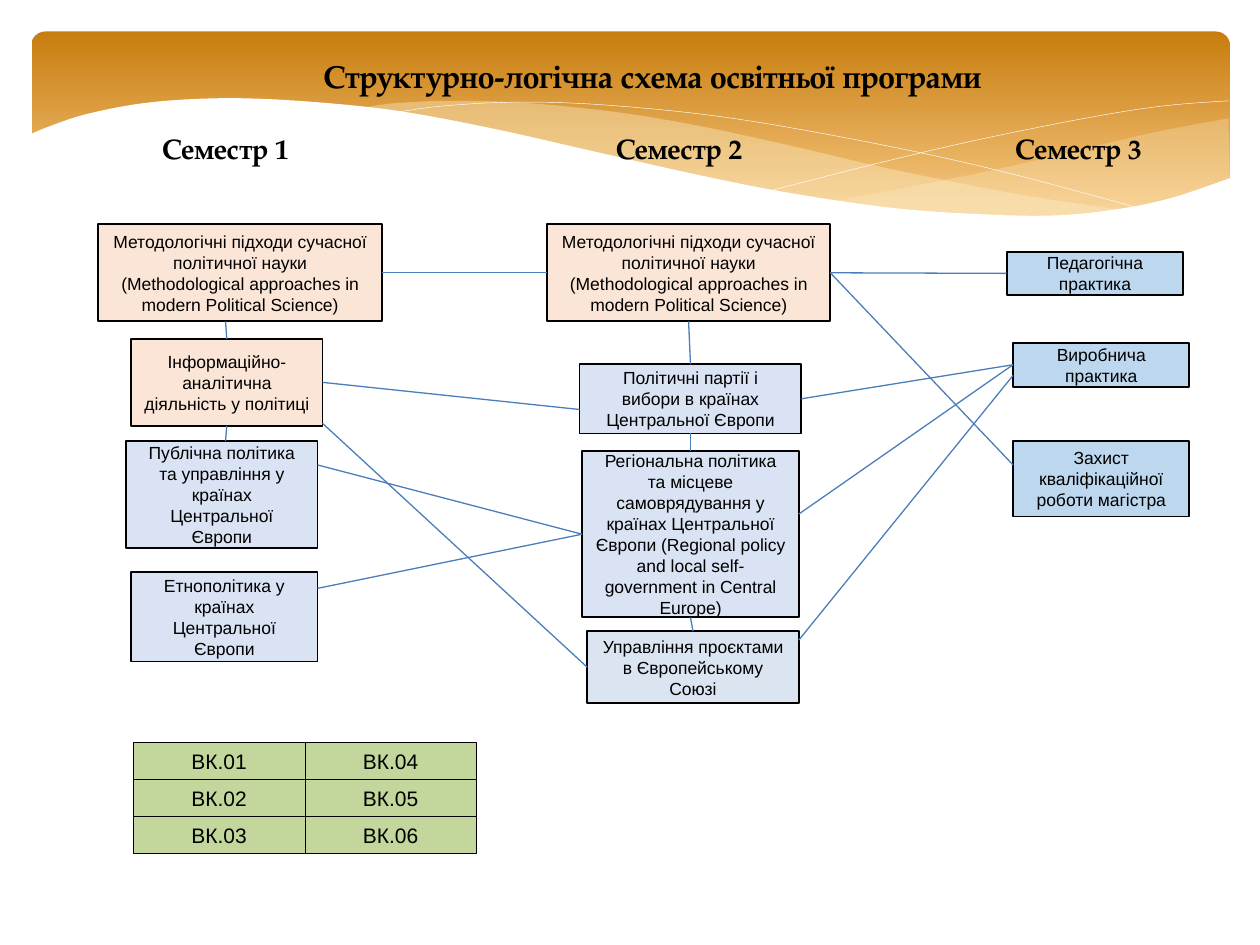
from lxml.etree import SubElement
from pptx import Presentation
from pptx.dml.color import RGBColor
from pptx.enum.shapes import MSO_CONNECTOR as Link, MSO_SHAPE as Shape
from pptx.enum.text import MSO_ANCHOR as Anchor, PP_ALIGN as Align
from pptx.oxml.ns import qn
from pptx.util import Inches, Pt

COLORS = {
    "ink": "000000", "paper": "FFFFFF", "amber": "C87D0E", "sand": "F6C782",
    "cream": "FBEEC9", "core": "FBE5D6", "course": "DAE3F3", "project": "DBE5F1",
    "practice": "BDD7EE", "elective": "C3D69B", "link": "4A7EBB",
}
UNIT = Inches(0.1)
TOP, LEFT, BOTTOM, RIGHT = range(4)
SERIF, SANS = "TeX Gyre Pagella", "Arial"

METHODS = ("Методологічні підходи сучасної політичної науки\n"
           "(Methodological approaches in modern Political Science)")
COURSES = {
    "methods 1": (7.8, 17.8, 22.5, 7.7, "core", METHODS),
    "methods 2": (43.4, 17.8, 22.5, 7.7, "core", METHODS),
    "analytics": (10.4, 26.9, 15.2, 6.9, "core",
                  "Інформаційно-аналітична діяльність у політиці"),
    "public policy": (10, 35, 15.2, 8.5, "course",
                      "Публічна політика та управління у країнах Центральної Європи"),
    "ethnopolitics": (10.4, 45.4, 14.8, 7.1, "course",
                      "Етнополітика у країнах Центральної Європи"),
    "parties": (46, 28.9, 17.6, 5.5, "course",
                "Політичні партії і вибори в країнах Центральної Європи"),
    "regions": (46.2, 35.8, 17.2, 13.2, "course",
                "Регіональна політика та місцеве самоврядування у країнах Центральної "
                "Європи (Regional policy and local self-government in Central Europe)"),
    "projects": (46.6, 50.1, 16.8, 5.7, "project",
                 "Управління проєктами в Європейському Союзі"),
    "teaching": (79.9, 20, 14, 3.4, "practice", "Педагогічна практика"),
    "internship": (80.4, 27.2, 14, 3.5, "practice", "Виробнича\nпрактика"),
    "defence": (80.4, 35, 14, 6, "practice", "Захист кваліфікаційної роботи магістра"),
}
LINKS = [
    (("methods 1", RIGHT), ("methods 2", LEFT)),
    (("methods 2", RIGHT), ("teaching", LEFT)),
    (("methods 2", RIGHT), (80.4, 36.9)),
    ((17.9, 25.5), ("analytics", TOP)),
    (("analytics", BOTTOM), (17.9, 35)),
    (("analytics", RIGHT), (46, 32.5)),
    ((25.6, 33.6), ("projects", LEFT)),
    ((25.2, 36.9), ("regions", LEFT)),
    ((25.2, 46.7), ("regions", LEFT)),
    (("methods 2", BOTTOM), ("parties", TOP)),
    (("parties", BOTTOM), ("regions", TOP)),
    (("regions", BOTTOM), ("projects", TOP)),
    (("parties", RIGHT), ("internship", LEFT)),
    ((63.4, 40.8), ("internship", LEFT)),
    ((63.4, 50.8), (80.4, 29.8)),
]
SWELL_RIGHT = (
    [(97.5, 9.4), (92.1, 10.4), (86.1, 11.8), (77.9, 13.7), (66.1, 16)],
    [(66.1, 16), (73.2, 16.8), (80.3, 17.2), (86.3, 17), (92.1, 16), (97.6, 14.1)],
)
SWELL_MIDDLE = (
    [(89.3, 16.7), (80.7, 15.4), (70.6, 13.4), (62.9, 11.6), (55.5, 10),
     (48.9, 8.9), (42, 8.2), (36.1, 8), (31.3, 8.2), (28.6, 8.6)],
    [(28.6, 8.6), (36.2, 9.7), (44.9, 11.6), (56.6, 14.3), (66.5, 16.1),
     (76.1, 17.1), (83.8, 17.2), (89.3, 16.7)],
)
CRESTS = [
    [(30.9, 9), (35.3, 8.4), (41.6, 8.1), (48.9, 8.4), (58.2, 9.4),
     (69.5, 11.4), (79.5, 13.6), (90.7, 16.6)],
    [(61.3, 15.1), (69.5, 13), (77.6, 11.1), (86.6, 9.3), (92.4, 8.4), (97.5, 8)],
]
WAVE = [(2.3, 10.7), (4, 10), (6.7, 9.1), (10.6, 8.3), (14.6, 7.9), (19.3, 7.8),
        (25, 8.1), (31.6, 8.8), (39.1, 10.2), (47.5, 12.1), (55.5, 13.9),
        (62.6, 15.3), (70.8, 16.5), (77.8, 17), (83.7, 17.1), (88.7, 16.6),
        (93, 15.7), (97.7, 14.1)]


def rgb(name):
    """Return the named colour."""
    return RGBColor.from_string(COLORS[name])


def grid(*lengths):
    """Turn grid units into slide lengths."""
    return [round(length * UNIT) for length in lengths]


def smooth(anchors, steps=6):
    """Run a Catmull-Rom curve through the anchors."""
    padded = [anchors[0], *anchors, anchors[-1]]
    curve = []
    for a, b, c, d in zip(padded, padded[1:], padded[2:], padded[3:]):
        for t in (step / steps for step in range(steps)):
            curve.append(tuple(
                q + t / 2 * (r - p + t * (2 * p - 5 * q + 4 * r - s + t * (3 * (q - r) + s - p)))
                for p, q, r, s in zip(a, b, c, d)))
    return curve + [anchors[-1]]


def add_outline(slide, points, color, opacity=100, filled=True):
    """Draw a filled area or an open thin curve."""
    start, *rest = [grid(*point) for point in points]
    builder = slide.shapes.build_freeform(*start)
    builder.add_line_segments(rest, close=filled)
    area = builder.convert_to_shape()
    area.shadow.inherit = False
    if filled:
        area.fill.solid()
        area.fill.fore_color.rgb = rgb(color)
        area.line.fill.background()
        tint = area.element.find(".//" + qn("a:srgbClr"))
        SubElement(tint, qn("a:alpha"), val=str(opacity * 1000))
    else:
        area.fill.background()
        area.line.color.rgb = rgb(color)
        area.line.width = Pt(0.25)


def add_banner(slide):
    """Draw the gradient header with its waves."""
    header = slide.shapes.add_shape(Shape.ROUNDED_RECTANGLE, *grid(2.5, 2.5, 95.1, 15.6))
    header.adjustments[0] = 0.07
    header.shadow.inherit = False
    header.line.fill.background()
    header.fill.gradient()
    header.fill.gradient_angle = 270
    for stop, color, position in zip(header.fill.gradient_stops, ("amber", "sand"), (0, 0.9)):
        stop.color.rgb = rgb(color)
        stop.position = position
    for (upper, lower), opacity in ((SWELL_RIGHT, 29), (SWELL_MIDDLE, 40)):
        add_outline(slide, smooth(upper) + smooth(lower), "cream", opacity)
    for crest in CRESTS:
        add_outline(slide, smooth(crest), "paper", filled=False)
    add_outline(slide, smooth(WAVE) + [(97.7, 22.4), (2.3, 22.4)], "paper")


def write(frame, text, size, font, bold=False):
    """Fill a text frame with centred paragraphs."""
    frame.text = text
    frame.word_wrap = True
    frame.vertical_anchor = Anchor.MIDDLE
    for paragraph in frame.paragraphs:
        paragraph.alignment = Align.CENTER
        paragraph.font.size = Pt(size)
        paragraph.font.name = font
        paragraph.font.bold = bold
        paragraph.font.color.rgb = rgb("ink")


def add_headings(slide):
    """Place the title and the semester headings over the banner."""
    title = slide.shapes.title
    title.left, title.top, title.width, title.height = grid(6.8, 3.8, 90, 4.4)
    write(title.text_frame, "Структурно-логічна схема освітньої програми", 18, SERIF, True)
    title.element.getparent().append(title.element)
    for number, center in enumerate((17.9, 53.9, 85.6), 1):
        heading = slide.shapes.add_textbox(*grid(center - 8, 9.8, 16, 4))
        write(heading.text_frame, f"Семестр {number}", 16, SERIF, True)


def add_box(slide, x, y, width, height, color, text, size=10, border=1):
    """Draw one bordered box with its text."""
    box = slide.shapes.add_shape(Shape.RECTANGLE, *grid(x, y, width, height))
    box.shadow.inherit = False
    box.fill.solid()
    box.fill.fore_color.rgb = rgb(color)
    box.line.color.rgb = rgb("ink")
    box.line.width = Pt(border)
    write(box.text_frame, text, size, SANS)
    return box


def add_link(slide, boxes, start, end):
    """Draw a line between box sides or grid points."""
    line = slide.shapes.add_connector(
        Link.STRAIGHT, *[c for e in (start, end) for c in ((0, 0) if e[0] in boxes else grid(*e))])
    for place, join in ((start, line.begin_connect), (end, line.end_connect)):
        if place[0] in boxes:
            join(boxes[place[0]], place[1])
    line.line.color.rgb = rgb("link")
    line.line.width = Pt(0.75)
    SubElement(line.element.find(qn("p:spPr")), qn("a:effectLst"))


def main():
    """Build the curriculum scheme."""
    deck = Presentation()
    deck.slide_width, deck.slide_height = grid(100, 75)
    slide = deck.slides.add_slide(deck.slide_layouts[5])
    add_banner(slide)
    add_headings(slide)
    boxes = {name: add_box(slide, *course) for name, course in COURSES.items()}
    for start, end in LINKS:
        add_link(slide, boxes, start, end)
    for index in range(6):
        column, row = divmod(index, 3)
        add_box(slide, 10.6 + 13.6 * column, 58.9 + 2.95 * row, 13.6, 2.95,
                "elective", f"ВК.{index + 1:02}", size=12, border=0.25)
    deck.save("out.pptx")


if __name__ == "__main__":
    main()
